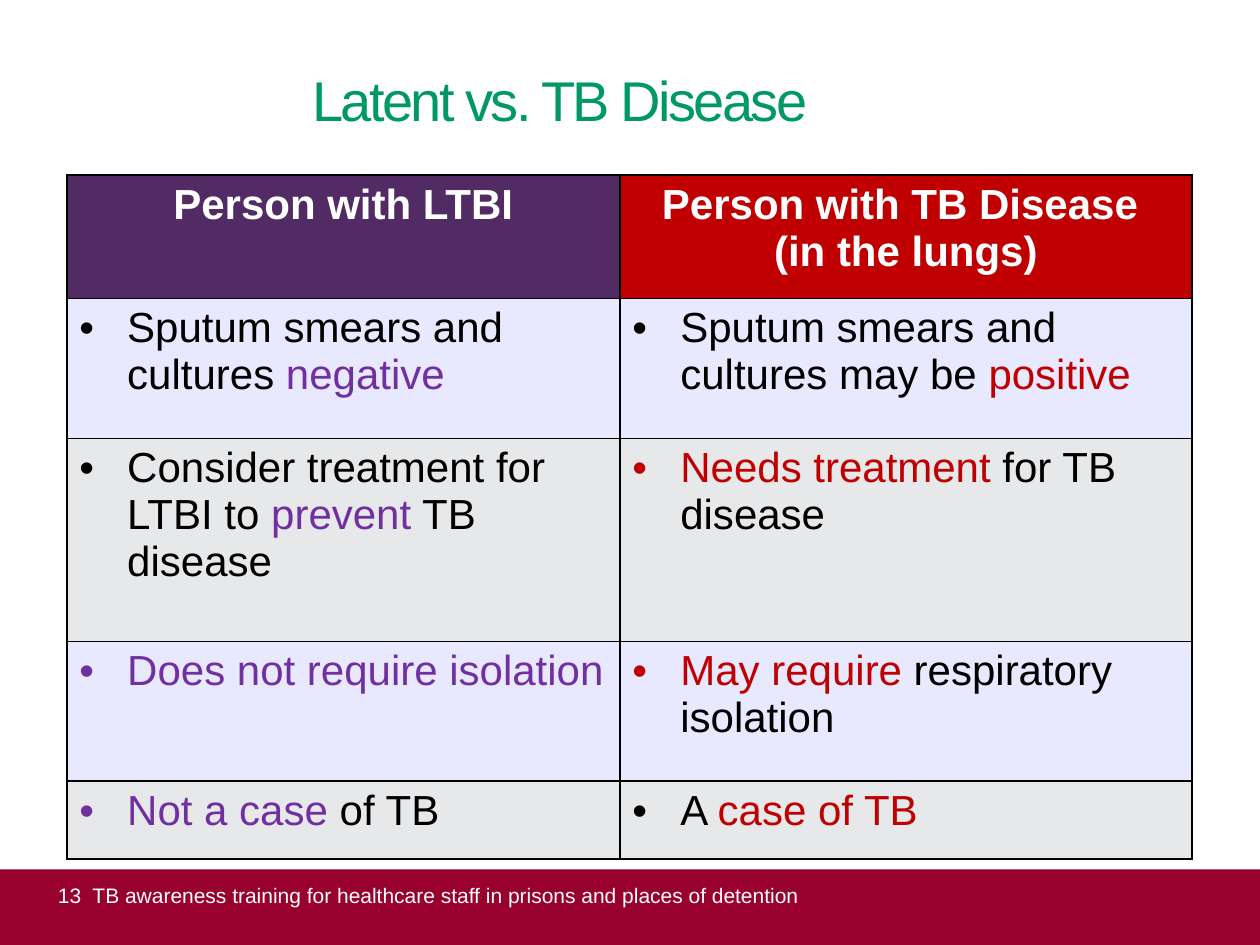
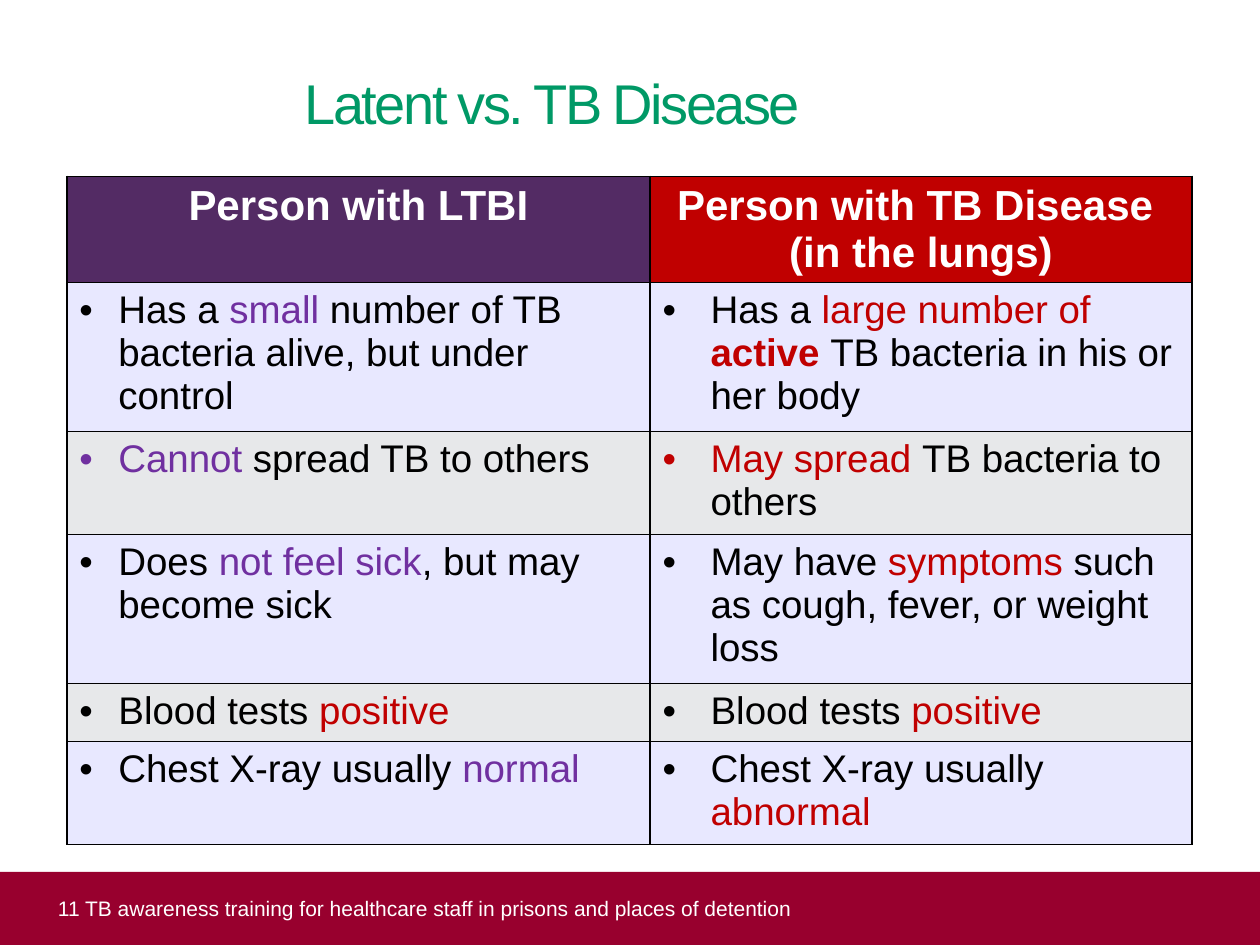
from typing import NamedTuple

from lxml import etree
from pptx import Presentation
from pptx.dml.color import RGBColor
from pptx.enum.shapes import MSO_SHAPE
from pptx.enum.text import MSO_ANCHOR, MSO_AUTO_SIZE, PP_ALIGN
from pptx.oxml.ns import qn
from pptx.util import Inches, Pt

TOP, MIDDLE = MSO_ANCHOR.TOP, MSO_ANCHOR.MIDDLE
LEFT, CENTER = PP_ALIGN.LEFT, PP_ALIGN.CENTER
NO_AUTOFIT = MSO_AUTO_SIZE.NONE
RECTANGLE = MSO_SHAPE.RECTANGLE

COLORS = {
    "title": "009966",
    "band": "98002E",
    "white": "FFFFFF",
    "black": "000000",
    "latent_head": "532B64",
    "latent": "7030A0",
    "disease": "C00000",
    "lilac": "CCCCFF",
    "grey": "E7E8EA",
}
FONT = "Arial"
TITLE_ONLY = 5
LILAC_OPACITY = 44
TITLE_TEXT = "Latent vs. TB Disease"
FOOTER_TEXT = "TB awareness training for healthcare staff in prisons and places of detention"
HEADERS = (
    ("latent_head", ("Person with LTBI",)),
    ("disease", ("Person with TB Disease ", "(in the lungs)")),
)


class Span(NamedTuple):
    text: str
    color: str = "black"
    bold: bool = False


class Comparison(NamedTuple):
    title_left: float
    title_width: float
    title_inset: float
    table_top: float
    column_widths: tuple[float, float]
    row_heights: tuple[float, ...]
    indents: tuple[float, float]
    body_size: int
    rows: tuple[tuple[list[Span], list[Span]], ...]
    footer_top: float
    footer_lift: float
    footer_prefix: str


def latent(text: str) -> Span:
    return Span(text, "latent")


def disease(text: str, bold: bool = False) -> Span:
    return Span(text, "disease", bold)


COMPARISONS = (
    Comparison(
        title_left=2.48, title_width=4.59, title_inset=0.04,
        table_top=1.39,
        column_widths=(4.39, 4.54),
        row_heights=(0.98, 1.11, 1.61, 1.11, 0.62),
        indents=(0.38, 0.38),
        body_size=24,
        rows=(
            ([Span("Sputum smears and cultures "), latent("negative")],
             [Span("Sputum smears and cultures may be "), disease("positive")]),
            ([Span("Consider treatment for LTBI to "), latent("prevent"), Span(" TB disease")],
             [disease("Needs treatment "), Span("for TB disease")]),
            ([latent("Does not require isolation")],
             [disease("May require "), Span("respiratory isolation")]),
            ([latent("Not a case "), Span("of TB")],
             [Span("A "), disease("case of TB")]),
        ),
        footer_top=6.9, footer_lift=0.19, footer_prefix="13  ",
    ),
    Comparison(
        title_left=2.42, title_width=7.42, title_inset=0.06,
        table_top=1.4,
        column_widths=(4.63, 4.3),
        row_heights=(0.84, 1.18, 0.82, 1.18, 0.46, 0.82),
        indents=(0.31, 0.38),
        body_size=22,
        rows=(
            ([Span("Has a "), latent("small"),
              Span(" number of TB bacteria alive, but under control")],
             [Span("Has a "), disease("large number of "), disease("active ", True),
              Span("TB bacteria in his or her body")]),
            ([latent("Cannot"), Span(" spread TB to others")],
             [disease("May spread "), Span("TB bacteria to others")]),
            ([Span("Does "), latent("not feel sick"), Span(", but may become sick")],
             [Span("May have "), disease("symptoms"),
              Span(" such as cough, fever, or weight loss")]),
            ([Span("Blood tests "), disease("positive")],
             [Span("Blood tests "), disease("positive")]),
            ([Span("Chest X-ray usually "), latent("normal")],
             [Span("Chest X-ray usually "), disease("abnormal")]),
        ),
        footer_top=6.92, footer_lift=0, footer_prefix="11 ",
    ),
)


def rgb(name: str) -> RGBColor:
    return RGBColor.from_string(COLORS[name])


def add_run(paragraph, span: Span, size: float):
    run = paragraph.add_run()
    run.text = span.text
    run.font.name = FONT
    run.font.size = Pt(size)
    run.font.bold = span.bold
    run.font.color.rgb = rgb(span.color)
    return run


def set_insets(text_frame, left: float, top: float, right: float, bottom: float) -> None:
    text_frame.margin_left, text_frame.margin_top = Inches(left), Inches(top)
    text_frame.margin_right, text_frame.margin_bottom = Inches(right), Inches(bottom)


def add_title(slide, comparison: Comparison) -> None:
    title = slide.shapes.title
    title.left, title.top = Inches(comparison.title_left), Inches(0.48)
    title.width, title.height = Inches(comparison.title_width), Inches(0.83)
    text_frame = title.text_frame
    text_frame.auto_size = NO_AUTOFIT
    text_frame.word_wrap = True
    text_frame.vertical_anchor = TOP
    set_insets(text_frame, 0, comparison.title_inset, 0, 0)
    paragraph = text_frame.paragraphs[0]
    paragraph.alignment = LEFT
    run = add_run(paragraph, Span(TITLE_TEXT, "title"), 32)
    run.font._element.set("spc", "-150")


def style_cell(cell, color: str) -> None:
    """Give a cell a black frame and its fill, with lilac partly transparent."""
    properties = cell._tc.get_or_add_tcPr()
    for side in ("a:lnL", "a:lnR", "a:lnT", "a:lnB"):
        line = etree.SubElement(properties, qn(side), w=str(Pt(1)))
        line_fill = etree.SubElement(line, qn("a:solidFill"))
        etree.SubElement(line_fill, qn("a:srgbClr"), val=COLORS["black"])
    cell.fill.solid()
    cell.fill.fore_color.rgb = rgb(color)
    if color == "lilac":
        fill_color = properties.find(qn("a:solidFill")).find(qn("a:srgbClr"))
        etree.SubElement(fill_color, qn("a:alpha"), val=str(LILAC_OPACITY * 1000))


def fill_header(cell, lines: tuple[str, ...]) -> None:
    text_frame = cell.text_frame
    for index, line in enumerate(lines):
        paragraph = text_frame.add_paragraph() if index else text_frame.paragraphs[0]
        paragraph.alignment = CENTER
        add_run(paragraph, Span(line, "white", True), 24)


def fill_bullet(cell, spans: list[Span], indent: float, size: int) -> None:
    paragraph = cell.text_frame.paragraphs[0]
    properties = paragraph._p.get_or_add_pPr()
    properties.set("marL", str(Inches(indent)))
    properties.set("indent", str(-Inches(indent)))
    etree.SubElement(properties, qn("a:buFont"), typeface=FONT)
    etree.SubElement(properties, qn("a:buChar"), char="•")
    paragraph.space_after = Pt(6)
    for span in spans:
        add_run(paragraph, span, size)


def add_comparison_table(slide, comparison: Comparison) -> None:
    widths, heights = comparison.column_widths, comparison.row_heights
    table = slide.shapes.add_table(
        len(heights), len(widths), Inches(0.53), Inches(comparison.table_top),
        Inches(sum(widths)), Inches(sum(heights))).table
    table.first_row = table.horz_banding = False
    for column, width in zip(table.columns, widths):
        column.width = Inches(width)
    for row, height in zip(table.rows, heights):
        row.height = Inches(height)
    for column_index, (color, lines) in enumerate(HEADERS):
        cell = table.cell(0, column_index)
        style_cell(cell, color)
        fill_header(cell, lines)
    for row_index, row_spans in enumerate(comparison.rows, start=1):
        for column_index, spans in enumerate(row_spans):
            cell = table.cell(row_index, column_index)
            style_cell(cell, "lilac" if row_index % 2 else "grey")
            fill_bullet(cell, spans, comparison.indents[column_index], comparison.body_size)


def add_footer(slide, comparison: Comparison) -> None:
    top = comparison.footer_top
    band = slide.shapes.add_shape(RECTANGLE, 0, Inches(top), Inches(10), Inches(7.5 - top))
    band.shadow.inherit = False
    band.fill.solid()
    band.fill.fore_color.rgb = rgb("band")
    band.line.fill.background()
    text_frame = band.text_frame
    text_frame.word_wrap = True
    text_frame.vertical_anchor = MIDDLE
    set_insets(text_frame, 0.46, 0, 0.1, comparison.footer_lift)
    paragraph = text_frame.paragraphs[0]
    paragraph.alignment = LEFT
    add_run(paragraph, Span(comparison.footer_prefix + FOOTER_TEXT, "white"), 12)


def main() -> None:
    presentation = Presentation()
    presentation.slide_width, presentation.slide_height = Inches(10), Inches(7.5)
    for comparison in COMPARISONS:
        slide = presentation.slides.add_slide(presentation.slide_layouts[TITLE_ONLY])
        add_title(slide, comparison)
        add_comparison_table(slide, comparison)
        add_footer(slide, comparison)
    presentation.save("out.pptx")


if __name__ == "__main__":
    main()
